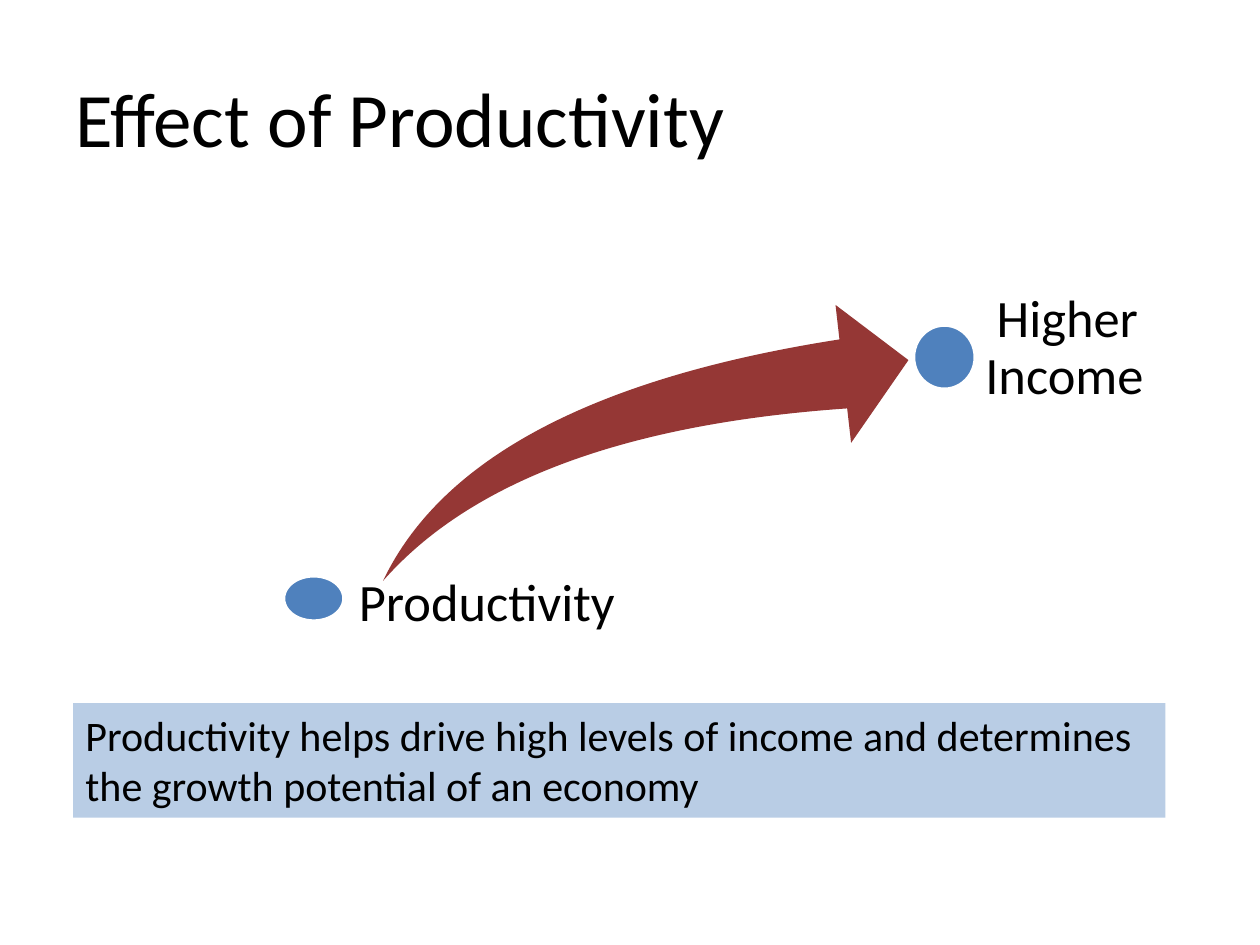
from dataclasses import dataclass

from pptx import Presentation
from pptx.dml.color import RGBColor
from pptx.enum import shapes, text
from pptx.util import Inches, Pt

FONT = "Calibri"
BLACK, WHITE = "000000", "FFFFFF"
BLUE, PALE_BLUE, RED = "4F81BD", "B9CDE5", "953735"


@dataclass
class Box:
    left: float
    top: float
    width: float
    height: float

    def lengths(self):
        return [Inches(n) for n in (self.left, self.top, self.width, self.height)]


@dataclass
class Milestone:
    label: str
    dot: Box
    label_box: Box
    inset: float
    indent: float = 0


def colour(value: str) -> RGBColor:
    return RGBColor.from_string(value)


def add_text(slide, box: Box, content: str, *, size: float, fill: str = "",
             anchor=text.MSO_ANCHOR.TOP, insets=(0.1, 0.05, 0.1, 0.05),
             line_spacing: float = 1, indent: float = 0):
    shape = slide.shapes.add_textbox(*box.lengths())
    if fill:
        shape.fill.solid()
        shape.fill.fore_color.rgb = colour(fill)
    frame = shape.text_frame
    frame.word_wrap = True
    frame.vertical_anchor = anchor
    (frame.margin_left, frame.margin_top,
     frame.margin_right, frame.margin_bottom) = [Inches(n) for n in insets]
    paragraph = frame.paragraphs[0]
    paragraph.line_spacing = line_spacing
    if indent:
        paragraph._p.get_or_add_pPr().set("indent", str(Inches(indent)))
    run = paragraph.add_run()
    run.text = content
    run.font.name = FONT
    run.font.size = Pt(size)
    run.font.color.rgb = colour(BLACK)


def add_figure(slide, kind, box: Box, fill: str, line: str = ""):
    shape = slide.shapes.add_shape(kind, *box.lengths())
    shape.shadow.inherit = False
    shape.fill.solid()
    shape.fill.fore_color.rgb = colour(fill)
    if line:
        shape.line.color.rgb = colour(line)
        shape.line.width = Pt(2)
    else:
        shape.line.fill.background()
    return shape


def add_milestone(slide, milestone: Milestone):
    add_figure(slide, shapes.MSO_SHAPE.OVAL, milestone.dot, BLUE, WHITE)
    add_text(slide, milestone.label_box, milestone.label, size=30, line_spacing=0.9,
             insets=(milestone.inset, 0, 0, 0), indent=milestone.indent)


def main():
    presentation = Presentation()
    presentation.slide_width, presentation.slide_height = Inches(10), Inches(7.5)
    slide = presentation.slides.add_slide(presentation.slide_layouts[6])

    add_text(slide, Box(0.5, 0.3, 9, 1.25), "Effect of Productivity", size=44,
             anchor=text.MSO_ANCHOR.MIDDLE)

    arrow = add_figure(slide, shapes.MSO_SHAPE.SWOOSH_ARROW,
                       Box(3.04, 2.42, 4.17, 2.19), RED)
    arrow.adjustments[0] = arrow.adjustments[1] = 0.25

    milestones = [
        Milestone("Productivity", Box(2.25, 4.57, 0.48, 0.36),
                  Box(2.75, 4.57, 2.21, 0.46), inset=0.1),
        Milestone("Higher Income", Box(7.25, 2.58, 0.49, 0.51),
                  Box(7.65, 2.32, 1.47, 1.02), inset=0.17, indent=0.09),
    ]
    for milestone in milestones:
        add_milestone(slide, milestone)

    add_text(slide, Box(0.58, 5.58, 8.67, 0.91),
             "Productivity helps drive high levels of income and determines "
             "the growth potential of an economy", size=24, fill=PALE_BLUE)

    presentation.save("out.pptx")


if __name__ == "__main__":
    main()
